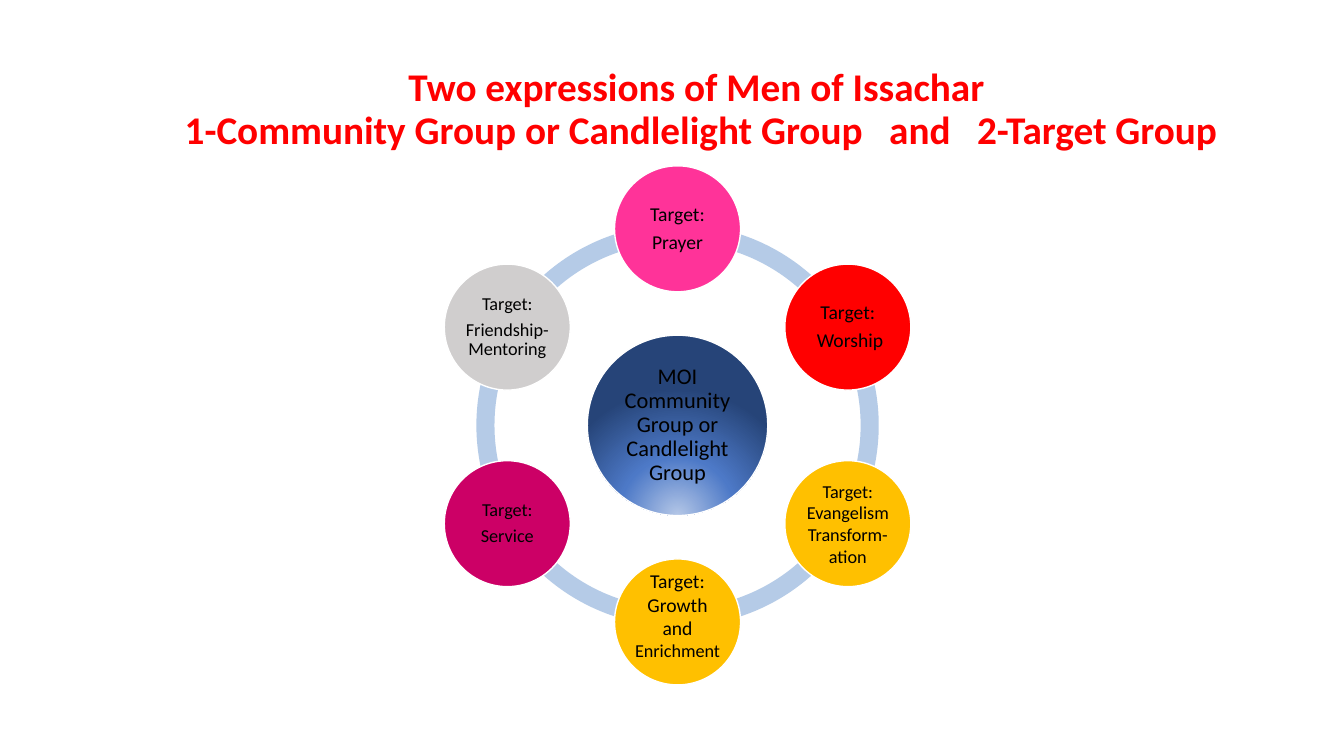
from math import cos, radians, sin

from pptx import Presentation
from pptx.dml.color import RGBColor
from pptx.enum.shapes import MSO_SHAPE as Shape
from pptx.enum.text import MSO_ANCHOR as Anchor, PP_ALIGN as Align
from pptx.oxml import parse_xml
from pptx.util import Inches, Pt

# Content
TITLE = ["Two expressions of Men of Issachar ",
         "1-Community Group or Candlelight Group   and   2-Target Group"]
HUB = [[("MOI Community Group or Candlelight Group", 16)]]
# Clockwise from the top: colour, paragraphs of (text, size), loose spacing, bottom inset
TARGETS = [
    ("pink", [[("Target:", 14)], [("Prayer", 14)]], True, 0.02),
    ("red", [[("Target:", 14)], [(" Worship", 14)]], True, 0.02),
    ("gold", [[("Target: Evangelism ", 13)], [("Transform-", 13)], [("ation", 13)]], False, 0.02),
    ("gold", [[("Target: Growth and ", 14), ("Enrichment", 13)]], False, 0.15),
    ("magenta", [[("Target:", 13)], [("Service", 13)]], True, 0.02),
    ("grey", [[("Target:", 13)], [("Friendship- Mentoring", 13)]], True, 0.02),
]
COLORS = {"white": "FFFFFF", "black": "000000", "red": "FF0000", "ring": "B5CBE7",
          "pink": "FF3399", "gold": "FFC000", "magenta": "CC0066", "grey": "D0CECE"}
HUB_GRADIENT = [(0, "B4C7E7"), (46, "4D79C7"), (100, "264478")]
FONT = "Calibri"

# Layout in inches
CENTER_X, CENTER_Y = 6.72, 4.22
ORBIT, RING_SIZE, HUB_SIZE, TARGET_SIZE = 1.95, 3.99, 1.79, 1.25
RING_THICKNESS = 0.045
STEP = 360 / len(TARGETS)


def color(name):
    return RGBColor.from_string(COLORS[name])


def add_run(paragraph, text, size, ink, bold=False):
    run = paragraph.add_run()
    run.text = text
    run.font.name, run.font.size, run.font.bold = FONT, Pt(size), bold
    run.font.color.rgb = color(ink)


def add_round(kind, x, y, size, fill):
    round_shape = slide.shapes.add_shape(
        kind, Inches(x - size / 2), Inches(y - size / 2), Inches(size), Inches(size))
    round_shape.shadow.inherit = False
    round_shape.fill.solid()
    round_shape.fill.fore_color.rgb = color(fill)
    round_shape.line.fill.background()
    return round_shape


def add_circle(x, y, size, fill, paragraphs, loose=True, bottom=0.02):
    circle = add_round(Shape.OVAL, x, y, size, fill)
    circle.line.color.rgb = color("white")
    circle.line.width = Pt(1)
    frame = circle.text_frame
    frame.word_wrap = True
    frame.vertical_anchor = Anchor.MIDDLE
    frame.margin_left = frame.margin_right = frame.margin_top = Inches(0.02)
    frame.margin_bottom = Inches(bottom)
    for i, runs in enumerate(paragraphs):
        paragraph = frame.add_paragraph() if i else frame.paragraphs[0]
        paragraph.alignment = Align.CENTER
        if loose:
            paragraph.line_spacing = 0.9
            paragraph.space_after = Pt(0.35 * runs[0][1])
        for text, size in runs:
            add_run(paragraph, text, size, "black")
    return circle


def set_hub_gradient(hub):
    stops = "".join(f'<a:gs pos="{pos * 1000}"><a:srgbClr val="{value}"/></a:gs>'
                    for pos, value in HUB_GRADIENT)
    gradient = parse_xml(
        '<a:gradFill xmlns:a="http://schemas.openxmlformats.org/drawingml/2006/main"'
        f' rotWithShape="1"><a:gsLst>{stops}</a:gsLst><a:path path="circle">'
        '<a:fillToRect l="50000" t="130000" r="50000" b="-30000"/></a:path></a:gradFill>')
    properties = hub.fill._xPr
    properties.replace(properties.eg_fillProperties, gradient)


prs = Presentation()
prs.slide_width, prs.slide_height = Inches(13.33), Inches(7.5)
slide = prs.slides.add_slide(prs.slide_layouts[6])

# Title
title = slide.shapes.add_textbox(Inches(1.2), Inches(0.37), Inches(11.5), Inches(1.45))
title.fill.solid()
title.fill.fore_color.rgb = color("white")
title.text_frame.word_wrap = True
title.text_frame.vertical_anchor = Anchor.MIDDLE
heading = title.text_frame.paragraphs[0]
heading.alignment = Align.CENTER
heading.line_spacing = 0.9
for i, line in enumerate(TITLE):
    if i:
        heading.add_line_break()
    add_run(heading, line, 28, "red", bold=True)

# Ring: one arc between each pair of neighbours (angle adjustments count 0.6 per degree)
for i in range(len(TARGETS)):
    start = (270 + i * STEP) % 360
    arc = add_round(Shape.BLOCK_ARC, CENTER_X, CENTER_Y, RING_SIZE, "ring")
    arc.adjustments[0] = start * 0.6
    arc.adjustments[1] = (start + STEP) % 360 * 0.6
    arc.adjustments[2] = RING_THICKNESS

# Hub
set_hub_gradient(add_circle(CENTER_X, CENTER_Y, HUB_SIZE, "ring", HUB))

# Target circles
for i, (fill, paragraphs, loose, bottom) in enumerate(TARGETS):
    angle = radians(270 + i * STEP)
    add_circle(CENTER_X + ORBIT * cos(angle), CENTER_Y + ORBIT * sin(angle),
               TARGET_SIZE, fill, paragraphs, loose, bottom)

prs.save("out.pptx")
